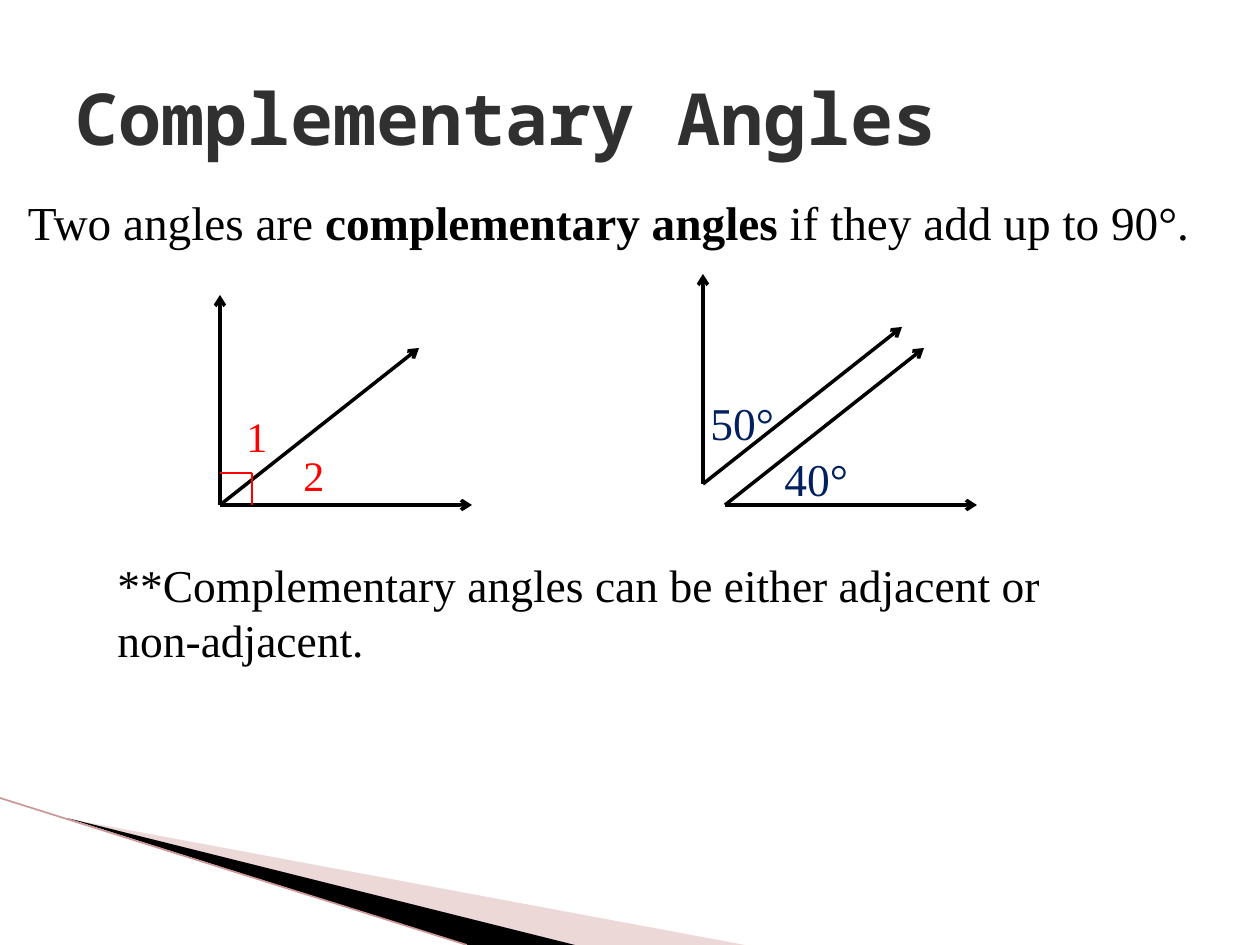
from dataclasses import dataclass

from lxml.etree import SubElement
from pptx import Presentation
from pptx.dml.color import RGBColor
from pptx.enum.shapes import MSO_CONNECTOR
from pptx.enum.text import MSO_ANCHOR
from pptx.oxml.ns import qn
from pptx.util import Pt

PX = 914400 / 126
WIDTH, HEIGHT = 1260, 945


@dataclass(frozen=True)
class Theme:
    title_font: str = "Noto Sans Mono"
    body_font: str = "Times New Roman"
    title: str = "303030"
    ink: str = "000000"
    mark: str = "FF0000"
    degrees: str = "002060"
    wedge: str = "D29E9E"
    edge: str = "CD9595"
    title_size: int = 41
    definition_size: int = 27
    text_size: int = 26
    number_size: int = 24


THEME = Theme()


def emu(px):
    return round(px * PX)


def add_text(shapes, box, runs, size, color, font=THEME.body_font,
             bold=None, wrap=True, anchor=MSO_ANCHOR.TOP):
    """Add one paragraph; runs are (text, bold) pairs."""
    frame = shapes.add_textbox(*map(emu, box)).text_frame
    frame.word_wrap = wrap
    frame.vertical_anchor = anchor
    paragraph = frame.paragraphs[0]
    paragraph.font.name = font
    paragraph.font.size = Pt(size)
    paragraph.font.bold = bold
    paragraph.font.color.rgb = RGBColor.from_string(color)
    for text, run_bold in runs:
        run = paragraph.add_run()
        run.text = text
        run.font.bold = run_bold
    return frame


def add_line(shapes, start, end, color, weight, arrow=False):
    line = shapes.add_connector(MSO_CONNECTOR.STRAIGHT, *map(emu, start + end))
    line.line.color.rgb = RGBColor.from_string(color)
    line.line.width = Pt(weight)
    if arrow:
        SubElement(line.line._get_or_add_ln(), qn("a:tailEnd"), type="arrow")
    SubElement(line._element.spPr, qn("a:effectLst"))


def add_wedge(shapes, points, color, opacity=None):
    builder = shapes.build_freeform(*points[0], scale=PX)
    builder.add_line_segments(points[1:], close=True)
    wedge = builder.convert_to_shape()
    wedge.shadow.inherit = False
    wedge.line.fill.background()
    wedge.fill.solid()
    wedge.fill.fore_color.rgb = RGBColor.from_string(color)
    if opacity is not None:
        fill = wedge._element.spPr.find(qn("a:solidFill"))
        SubElement(fill[0], qn("a:alpha"), val=str(opacity * 1000))


def add_rays(shapes, vertex, *directions):
    reach = {"up": (0, -210), "right": (252, 0), "slant": (199, -157)}
    x, y = vertex
    for direction in directions:
        dx, dy = reach[direction]
        add_line(shapes, vertex, (x + dx, y + dy), THEME.ink, 2, arrow=True)


def add_corner_decoration(shapes):
    add_wedge(shapes, [(69, 819), (745, HEIGHT), (575, HEIGHT)], THEME.wedge, 40)
    add_wedge(shapes, [(67, 818), (575, HEIGHT), (467, HEIGHT)], THEME.ink)
    add_line(shapes, (0, 798), (467, HEIGHT), THEME.edge, 0.95)


def add_adjacent_angles(shapes):
    x, y = 220, 505
    corner = 32
    add_rays(shapes, (x, y), "up", "right", "slant")
    # Right-angle mark
    tip = (x + corner, y - corner)
    for start in ((x, y - corner), (x + corner, y)):
        add_line(shapes, start, tip, THEME.mark, 1.5)
    for number, left, top in (("1", 234, 404), ("2", 291, 443)):
        add_text(shapes, (left, top, 47, 63), [(number, None)],
                 THEME.number_size, THEME.mark, wrap=False)


def add_separate_angles(shapes):
    add_rays(shapes, (725, 505), "right", "slant")
    add_rays(shapes, (703, 484), "up", "slant")
    for measure, left, top in (("40°", 772, 445), ("50°", 698, 389)):
        add_text(shapes, (left, top, 105, 68), [(measure, None)],
                 THEME.text_size, THEME.degrees)


def main():
    deck = Presentation()
    deck.slide_width, deck.slide_height = emu(WIDTH), emu(HEIGHT)
    shapes = deck.slides.add_slide(deck.slide_layouts[6]).shapes

    add_corner_decoration(shapes)

    # Title and definition
    add_text(shapes, (63, 38, 1149, 158), [("Complementary Angles", None)],
             THEME.title_size, THEME.title, THEME.title_font, bold=True,
             anchor=MSO_ANCHOR.MIDDLE)
    definition = add_text(
        shapes, (0, 187, WIDTH, 167),
        [("Two angles are ", None), ("complementary angles", True),
         (" if they add up to 90°.", None)],
        THEME.definition_size, THEME.ink)
    definition.margin_left = emu(28)

    # Angle diagrams and remark
    add_separate_angles(shapes.add_group_shape().shapes)
    add_text(shapes, (105, 551, 1022, 123),
             [("**Complementary angles can be either adjacent or non-adjacent.",
               None)],
             THEME.text_size, THEME.ink)
    add_adjacent_angles(shapes.add_group_shape().shapes)

    deck.save("out.pptx")


if __name__ == "__main__":
    main()
